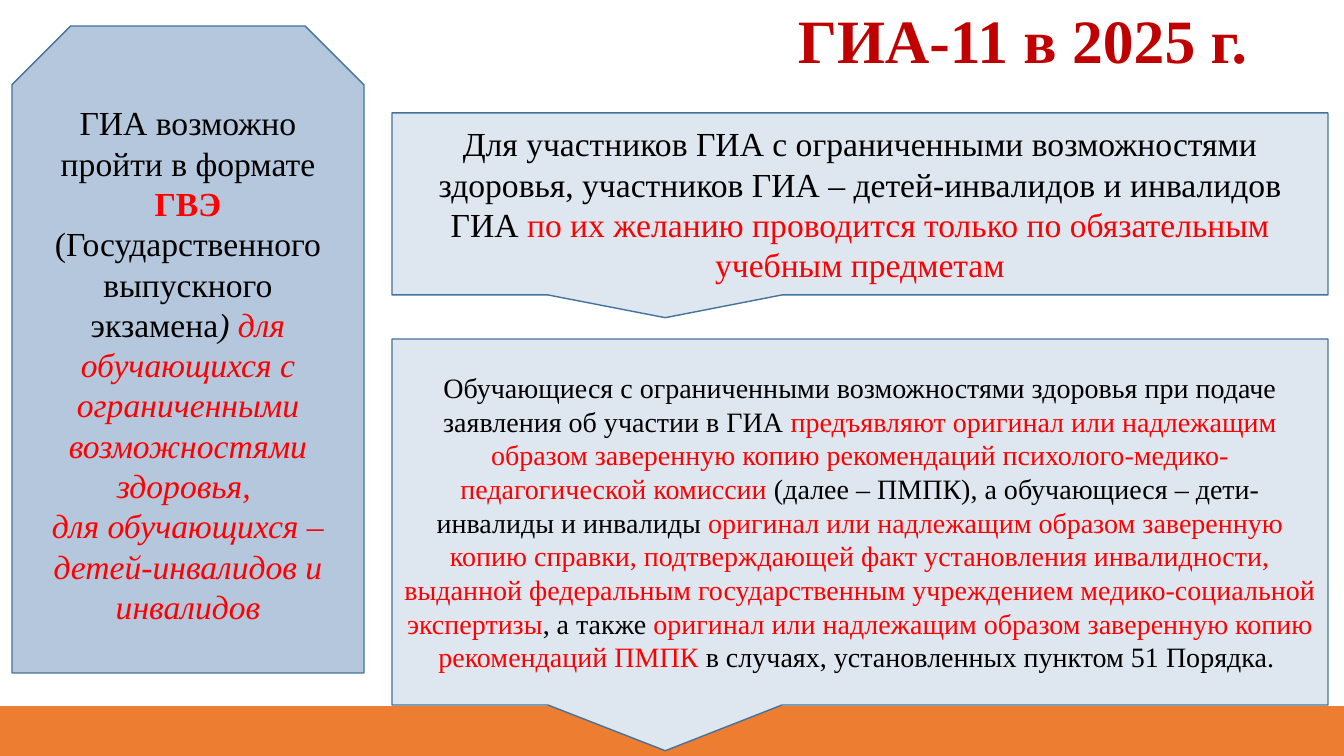
from pptx import Presentation
from pptx.dml.color import RGBColor
from pptx.enum.shapes import MSO_SHAPE as Shape
from pptx.enum.text import MSO_ANCHOR as Anchor, PP_ALIGN as Align
from pptx.util import Pt

WIDTH, HEIGHT = 1344, 756
EMU_PER_PX = 914400 / 100.8

BLACK = RGBColor(0x00, 0x00, 0x00)
RED = RGBColor(0xFF, 0x00, 0x00)
DARK_RED = RGBColor(0xC0, 0x00, 0x00)
ORANGE = RGBColor(0xED, 0x7D, 0x31)
BLUE = RGBColor(0xB4, 0xC7, 0xDC)
PALE_BLUE = RGBColor(0xDE, 0xE6, 0xEF)
OUTLINE = RGBColor(0x43, 0x72, 0x9D)


def px(value):
    return round(value * EMU_PER_PX)


class SlideBuilder:
    font_name = "Times New Roman"

    def __init__(self, presentation):
        self.slide = presentation.slides.add_slide(presentation.slide_layouts[6])

    def title(self, box, text, size):
        frame = self.slide.shapes.add_textbox(*map(px, box)).text_frame
        frame.word_wrap = True
        frame.vertical_anchor = Anchor.MIDDLE
        paragraph = frame.paragraphs[0]
        paragraph.line_spacing = 0.9
        self.style(paragraph.font, size, DARK_RED)
        paragraph.font.bold = True
        paragraph.add_run().text = text

    def shape(self, kind, box, fill, line, adjustments=()):
        shape = self.slide.shapes.add_shape(kind, *map(px, box))
        shape.shadow.inherit = False
        shape.fill.solid()
        shape.fill.fore_color.rgb = fill
        shape.line.color.rgb = line
        shape.line.width = Pt(1)
        for index, value in enumerate(adjustments):
            shape.adjustments[index] = value
        return shape

    def text(self, shape, size, paragraphs):
        """Each paragraph is a list of (text, colour, emphasis) runs."""
        frame = shape.text_frame
        frame.word_wrap = True
        frame.vertical_anchor = Anchor.MIDDLE
        for index, runs in enumerate(paragraphs):
            paragraph = frame.add_paragraph() if index else frame.paragraphs[0]
            paragraph.alignment = Align.CENTER
            self.style(paragraph.font, size, BLACK)
            for text, color, emphasis in runs:
                run = paragraph.add_run()
                run.text = text
                self.style(run.font, size, color)
                run.font.bold = emphasis == "bold"
                run.font.italic = emphasis == "italic"

    def callout(self, box, size, phrases):
        """Phrases alternate between black and red."""
        shape = self.shape(Shape.RECTANGULAR_CALLOUT, box, PALE_BLUE, OUTLINE,
                           (-0.208, 0.625))
        runs = [(phrase, RED if index % 2 else BLACK, "")
                for index, phrase in enumerate(phrases)]
        self.text(shape, size, [runs])

    def style(self, font, size, color):
        font.name = self.font_name
        font.size = Pt(size)
        font.color.rgb = color


def main():
    presentation = Presentation()
    presentation.slide_width = px(WIDTH)
    presentation.slide_height = px(HEIGHT)
    builder = SlideBuilder(presentation)

    # Heading and bottom bar
    builder.title((788, 0, 539, 87), "ГИА-11 в 2025 г.", 44)
    builder.shape(Shape.RECTANGLE, (0, 707, WIDTH, 49), ORANGE, ORANGE)

    # Exam format panel
    panel = builder.shape(Shape.SNIP_2_SAME_RECTANGLE, (12, 26, 352, 647),
                          BLUE, OUTLINE, (0.167, 0))
    builder.text(panel, 24, [
        [("ГИА возможно пройти в формате ", BLACK, ""),
         ("ГВЭ ", RED, "bold"),
         ("(Государственного выпускного экзамена", BLACK, ""),
         (") ", BLACK, "italic"),
         ("для обучающихся с ограниченными возможностями здоровья, ",
          RED, "italic")],
        [("для обучающихся – детей-инвалидов и инвалидов", RED, "italic")],
    ])

    # Conditions and required documents
    builder.callout((392, 113, 936, 182), 24, [
        "Для участников ГИА с ограниченными возможностями здоровья, "
        "участников ГИА – детей-инвалидов и инвалидов ГИА ",
        "по их желанию проводится только по обязательным учебным предметам",
    ])
    builder.callout((392, 339, 936, 366), 20, [
        "Обучающиеся с ограниченными возможностями здоровья при подаче "
        "заявления об участии в ГИА ",
        "предъявляют оригинал или надлежащим образом заверенную копию "
        "рекомендаций психолого-медико-педагогической комиссии ",
        "(далее – ПМПК), а обучающиеся – дети-инвалиды и инвалиды ",
        "оригинал или надлежащим образом заверенную копию справки, "
        "подтверждающей факт установления инвалидности, выданной федеральным "
        "государственным учреждением медико-социальной экспертизы",
        ", а также ",
        "оригинал или надлежащим образом заверенную копию рекомендаций ПМПК ",
        "в случаях, установленных пунктом 51 Порядка. ",
    ])

    presentation.save("out.pptx")


if __name__ == "__main__":
    main()
